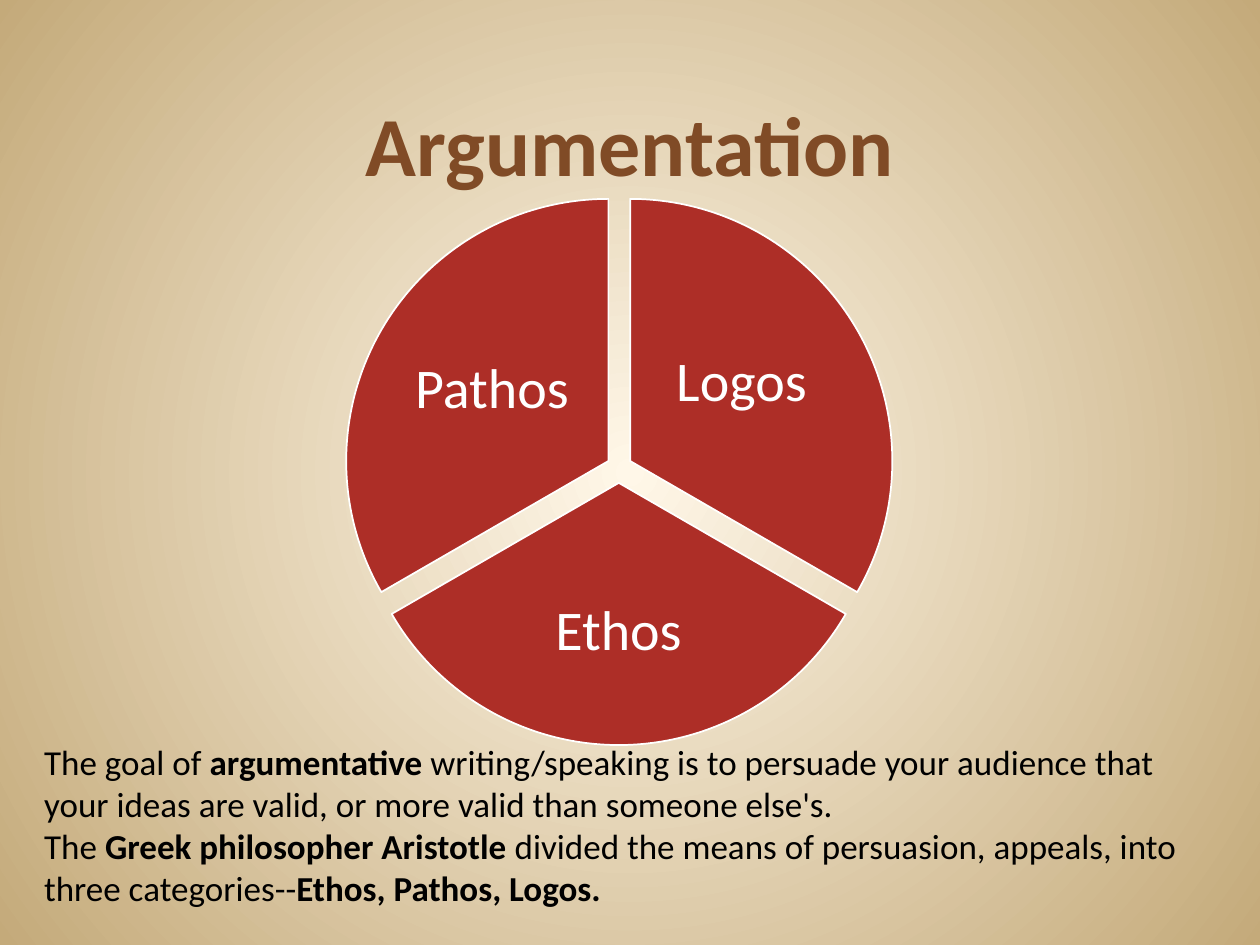
from lxml.etree import SubElement
from pptx import Presentation
from pptx.dml.color import RGBColor
from pptx.enum.shapes import MSO_SHAPE as Shape
from pptx.enum.text import MSO_ANCHOR as Anchor, PP_ALIGN as Align
from pptx.oxml.ns import qn
from pptx.util import Cm, Pt


def color(hex_text):
    return RGBColor.from_string(hex_text)


class SlideBuilder:
    font = "Calibri"
    title_color = "804B26"
    slice_color = "AD2E27"
    light = "FFFFFF"
    dark = "000000"
    background = ("FFF7E8", "C4AA7A")

    def __init__(self, slide):
        self.slide = slide

    def paint_background(self):
        """Fill the background with a gradient that spreads from the centre."""
        fill = self.slide.background.fill
        fill.gradient()
        for stop, hex_text in zip(fill.gradient_stops, self.background):
            stop.color.rgb = color(hex_text)
        gradient = self.slide.element.find(".//" + qn("a:gradFill"))
        gradient.remove(gradient.find(qn("a:lin")))
        circle = SubElement(gradient, qn("a:path"), {"path": "circle"})
        center = {side: "50000" for side in "ltrb"}
        SubElement(circle, qn("a:fillToRect"), center)

    def add_text(self, box, lines, size, hex_text, align=Align.LEFT,
                 anchor=Anchor.TOP, inset=None, spacing=None):
        """Write lines of (text, bold) runs, split by line breaks."""
        shape = self.slide.shapes.add_textbox(*map(Cm, box))
        frame = shape.text_frame
        frame.word_wrap = True
        frame.vertical_anchor = anchor
        if inset is not None:
            frame.margin_left = frame.margin_right = Cm(inset)
            frame.margin_top = frame.margin_bottom = Cm(inset)
        paragraph = frame.paragraphs[0]
        paragraph.alignment = align
        paragraph.line_spacing = spacing
        for index, line in enumerate(lines):
            if index:
                paragraph.add_line_break()
            for text, bold in line:
                run = paragraph.add_run()
                run.text = text
                run.font.name = self.font
                run.font.size = Pt(size)
                run.font.bold = bold
                run.font.color.rgb = color(hex_text)

    def add_slice(self, left, top, diameter, start, end):
        """Draw a pie slice between two clockwise angles in degrees."""
        box = map(Cm, (left, top, diameter, diameter))
        shape = self.slide.shapes.add_shape(Shape.PIE, *box)
        shape.shadow.inherit = False
        # Angles are stored in 1/60000 degree, adjustments in 1/100000.
        shape.adjustments[0] = start * 0.6
        shape.adjustments[1] = end * 0.6
        shape.fill.solid()
        shape.fill.fore_color.rgb = color(self.slice_color)
        shape.line.color.rgb = color(self.light)
        shape.line.width = Pt(1)


def main():
    presentation = Presentation()
    presentation.slide_width, presentation.slide_height = Cm(25.4), Cm(19.05)
    slide = presentation.slides.add_slide(presentation.slide_layouts[6])
    builder = SlideBuilder(slide)
    builder.paint_background()

    builder.add_text((1.27, 0.84, 22.86, 3.18), [[("Argumentation", True)]],
                     48, builder.title_color, Align.CENTER, Anchor.BOTTOM)

    diameter = 10.57
    appeals = [
        ("Logos", (7.42, 4.01), (270, 30), (13.16, 5.97, 3.58, 3.53)),
        ("Ethos", (7.19, 4.45), (30, 150), (10.08, 11.1, 4.78, 3.28)),
        ("Pathos", (6.98, 4.01), (150, 270), (8.13, 6.1, 3.58, 3.53)),
    ]
    for name, corner, angles, label_box in appeals:
        builder.add_slice(*corner, diameter, *angles)
        builder.add_text(label_box, [[(name, False)]], 32, builder.light,
                         Align.CENTER, Anchor.MIDDLE, inset=0.1, spacing=0.9)

    builder.add_text((0.64, 14.81, 24.13, 3.68), [
        [("The goal of ", False), ("argumentative ", True),
         ("writing/speaking is to persuade your audience that your ideas "
          "are valid, or more valid than someone else's. ", False)],
        [("The ", False), ("Greek philosopher Aristotle", True),
         (" divided the means of persuasion, appeals, into three "
          "categories--", False), ("Ethos, Pathos, Logos.", True)],
    ], 20, builder.dark)

    presentation.save("out.pptx")


if __name__ == "__main__":
    main()
